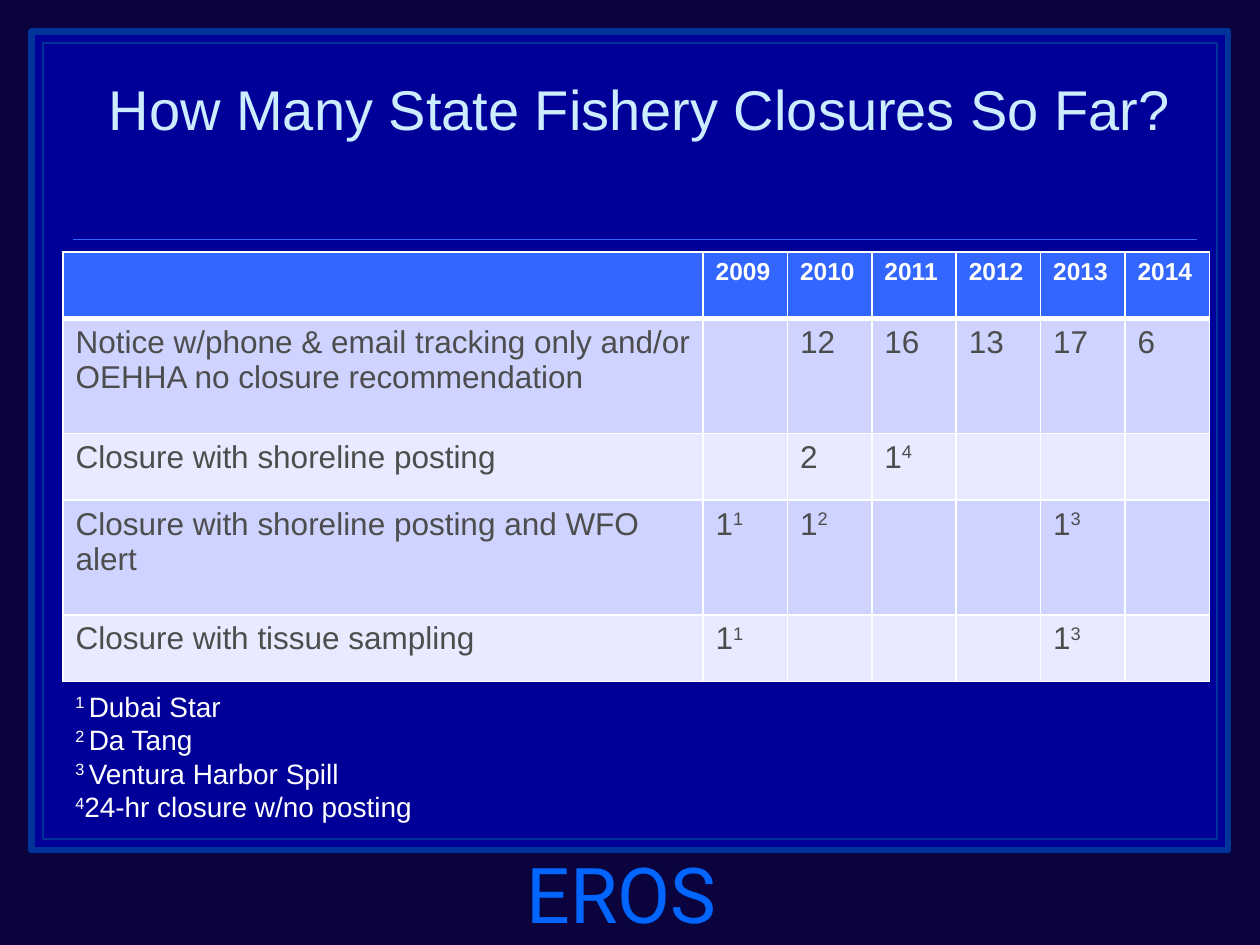
import pptx
import pptx.dml.color
import pptx.enum.shapes
import pptx.enum.text
import pptx.oxml
import pptx.oxml.ns
import pptx.util
from pptx.util import Inches

COLORS = {
    "background": "0B033D",
    "panel": "000099",
    "frame": "003399",
    "accent": "3366FF",
    "footer": "0066FF",
    "title": "CCECFF",
    "white": "FFFFFF",
    "body": "4D4D4D",
    "dark_band": "CED3FF",
    "light_band": "E8EAFF",
}
HEADER = ["", "2009", "2010", "2011", "2012", "2013", "2014"]
CLOSURES = [
    ["Notice w/phone & email tracking only and/or OEHHA no closure recommendation",
     "", "12", "16", "13", "17", "6"],
    ["Closure with shoreline posting", "", "2", "1^4", "", "", ""],
    ["Closure with shoreline posting and WFO alert", "1^1", "1^2", "", "", "1^3", ""],
    ["Closure with tissue sampling", "1^1", "", "", "", "1^3", ""],
]
FOOTNOTES = [("1 ", "Dubai Star"), ("2 ", "Da Tang"),
             ("3 ", "Ventura Harbor Spill"), ("4", "24-hr closure w/no posting")]


def color(name):
    return pptx.dml.color.RGBColor.from_string(COLORS[name])


def set_font(para, size, color_name, name="Arial", bold=False):
    para.font.size = pptx.util.Pt(size)
    para.font.name = name
    para.font.bold = bold
    para.font.color.rgb = color(color_name)


def add_span(para, text, raised=False):
    span = para.add_run()
    span.text = text
    if raised:
        span.font._element.set("baseline", "30000")


def add_panel(page, inset, color_name, weight):
    panel = page.shapes.add_shape(
        pptx.enum.shapes.MSO_SHAPE.RECTANGLE, Inches(inset), Inches(inset),
        Inches(10 - 2 * inset), Inches(7 - 2 * inset))
    panel.shadow.inherit = False
    panel.fill.solid()
    panel.fill.fore_color.rgb = color("panel")
    panel.line.color.rgb = color(color_name)
    panel.line.width = pptx.util.Pt(weight)


def add_rule(page):
    rule = page.shapes.add_connector(
        pptx.enum.shapes.MSO_CONNECTOR.STRAIGHT,
        Inches(0.58), Inches(1.9), Inches(9.5), Inches(1.9))
    rule.line.color.rgb = color("accent")
    rule.line.width = pptx.util.Pt(1)
    pptx.oxml.ns.qn("a:effectLst")
    rule._element.spPr.append(pptx.oxml.parse_xml(
        f'<a:effectLst {pptx.oxml.ns.nsdecls("a")}/>'))


def add_footer(page):
    box = page.shapes.add_textbox(Inches(4.08), Inches(6.67), Inches(1.93), Inches(0.83))
    box.text_frame.word_wrap = False
    para = box.text_frame.paragraphs[0]
    para.text = "EROS"
    set_font(para, 44, "footer", "Roboto")


def set_title(page):
    title = page.shapes.title
    title.left, title.top = Inches(0.58), Inches(0.42)
    title.width, title.height = Inches(9), Inches(0.75)
    frame = title.text_frame
    frame.text = "How Many State Fishery Closures So Far?"
    frame.vertical_anchor = pptx.enum.text.MSO_ANCHOR.BOTTOM
    frame.auto_size = pptx.enum.text.MSO_AUTO_SIZE.NONE
    para = frame.paragraphs[0]
    para.alignment = pptx.enum.text.PP_ALIGN.CENTER
    para.line_spacing = 0.8
    set_font(para, 32, "title")
    page.shapes._spTree.append(title._element)


def set_borders(cell, top, bottom):
    properties = cell._tc.get_or_add_tcPr()
    weights = {"lnL": 1, "lnR": 1, "lnT": top, "lnB": bottom}
    for position, (side, weight) in enumerate(weights.items()):
        properties.insert(position, pptx.oxml.parse_xml(
            f'<a:{side} {pptx.oxml.ns.nsdecls("a")} w="{pptx.util.Pt(weight)}">'
            f'<a:solidFill><a:srgbClr val="{COLORS["white"]}"/></a:solidFill></a:{side}>'))


def add_closure_table(page):
    rows = [HEADER] + CLOSURES
    table = page.shapes.add_table(
        len(rows), len(HEADER), Inches(0.5), Inches(2), Inches(9.08), Inches(3.42)).table
    for index, column in enumerate(table.columns):
        column.width = Inches(0.67 if index else 5.08)
    for index, values in enumerate(rows):
        table.rows[index].height = Inches(0.91 if index in (1, 3) else 0.53)
        header = index == 0
        band = "accent" if header else "dark_band" if index % 2 else "light_band"
        for cell, value in zip(table.rows[index].cells, values):
            cell.fill.solid()
            cell.fill.fore_color.rgb = color(band)
            set_borders(cell, 3 if index == 1 else 1, 3 if header else 1)
            para = cell.text_frame.paragraphs[0]
            if value:
                text, _, mark = value.partition("^")
                add_span(para, text)
                if mark:
                    add_span(para, mark, raised=True)
                set_font(para, 14 if header else 18, "white" if header else "body", bold=header)


def add_footnotes(page):
    box = page.shapes.add_textbox(Inches(0.5), Inches(5.42), Inches(5), Inches(1.54))
    frame = box.text_frame
    frame.word_wrap = True
    for index, (mark, text) in enumerate(FOOTNOTES):
        para = frame.add_paragraph() if index else frame.paragraphs[0]
        add_span(para, mark, raised=True)
        add_span(para, text)
        set_font(para, 16, "white")


def main():
    deck = pptx.Presentation()
    deck.slide_width, deck.slide_height = Inches(10), Inches(7.5)
    page = deck.slides.add_slide(deck.slide_layouts[5])
    page.background.fill.solid()
    page.background.fill.fore_color.rgb = color("background")
    add_panel(page, 0.25, "frame", 3.5)
    add_panel(page, 0.34, "frame", 0.75)
    add_rule(page)
    add_footer(page)
    set_title(page)
    add_closure_table(page)
    add_footnotes(page)
    deck.save("out.pptx")


if __name__ == "__main__":
    main()
